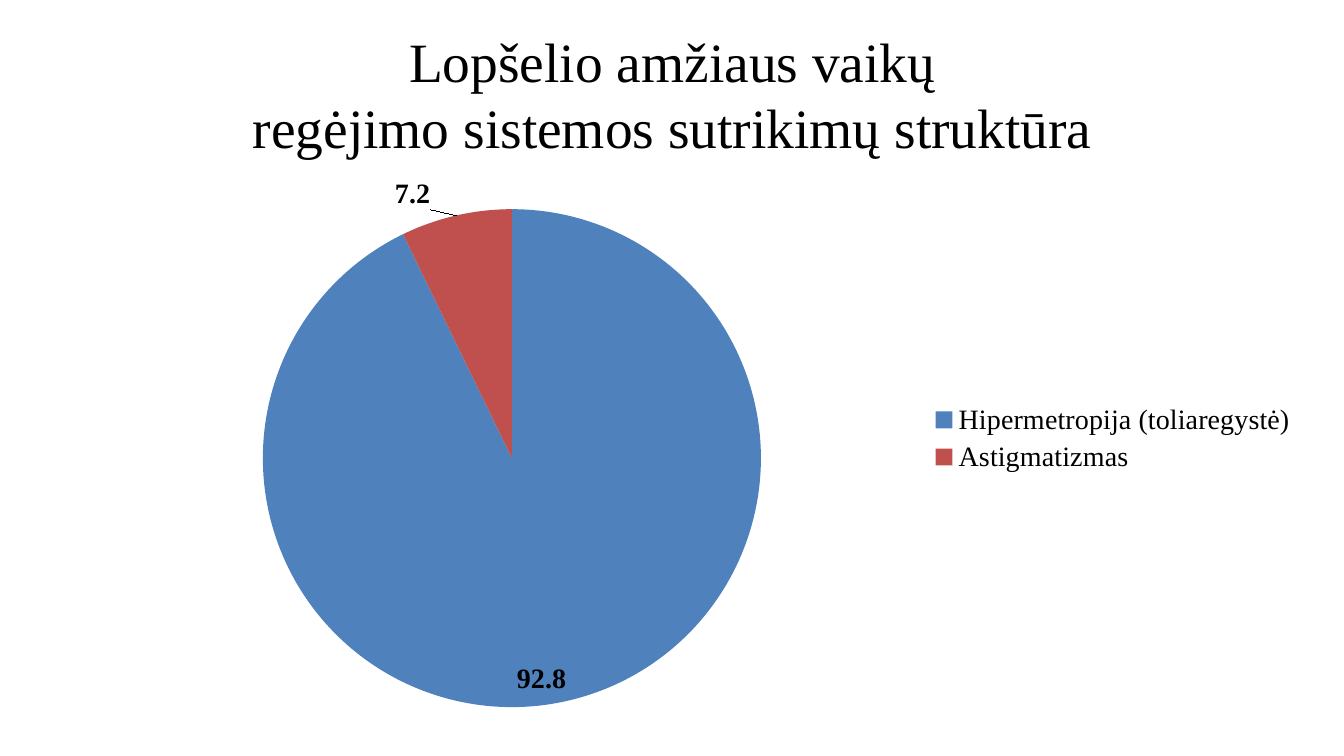
from lxml import etree
from pptx import Presentation
from pptx.chart.data import CategoryChartData
from pptx.dml.color import RGBColor
from pptx.enum import chart as ch, text
from pptx.oxml.ns import qn
from pptx.util import Inches, Pt

SERIF = "Times New Roman"


def style(font, size, bold=False):
    font.name, font.size, font.bold = SERIF, Pt(size), bold
    font.color.rgb = RGBColor.from_string("000000")


def manual_layout(**values):
    """Return a c:layout element holding the given settings in order."""
    layout = etree.Element(qn("c:layout"))
    manual = etree.SubElement(layout, qn("c:manualLayout"))
    for name, value in values.items():
        etree.SubElement(manual, qn("c:" + name)).set("val", str(value))
    return layout


prs = Presentation()
prs.slide_width, prs.slide_height = Inches(13.33), Inches(7.5)
s = prs.slides.add_slide(prs.slide_layouts[6])

# Title
title = s.shapes.add_textbox(Inches(0.67), Inches(0.3), Inches(12), Inches(1.25))
tf = title.text_frame
tf.word_wrap = True
tf.vertical_anchor = text.MSO_ANCHOR.MIDDLE
p = tf.paragraphs[0]
p.text = "Lopšelio amžiaus vaikų\vregėjimo sistemos sutrikimų struktūra"
p.alignment = text.PP_ALIGN.CENTER
style(p.font, 39.6)

# Pie chart
data = CategoryChartData()
data.categories = ["Hipermetropija (toliaregystė)", "Astigmatizmas"]
data.add_series("Series 1", [92.8, 7.2])
chart = s.shapes.add_chart(ch.XL_CHART_TYPE.PIE, Inches(0.92), Inches(1.55),
                           Inches(12.05), Inches(5.6), data).chart
chart.has_title = False
chart.font.name, chart.font.size = "Calibri", Pt(18)
chart.has_legend = True
chart.legend.position = ch.XL_LEGEND_POSITION.RIGHT
chart.legend.include_in_layout = False
style(chart.legend.font, 20)

plot = chart.plots[0]
plot.vary_by_categories = True
pie = plot.series[0]
for i, color in enumerate(["4F81BD", "C0504D"]):
    fill = pie.points[i].format.fill
    fill.solid()
    fill.fore_color.rgb = RGBColor.from_string(color)

labels = pie.data_labels
labels.show_value = True
labels.position = ch.XL_LABEL_POSITION.INSIDE_END
style(labels.font, 20, True)
small_label = pie.points[1].data_label
style(small_label.font, 20, True)
small_label.position = ch.XL_LABEL_POSITION.OUTSIDE_END

# Pie placement, and the small label moved aside with a leader line
area = chart._chartSpace.find(".//" + qn("c:plotArea"))
for old in area.findall(qn("c:layout")):
    area.remove(old)
area.insert(0, manual_layout(layoutTarget="inner", xMode="edge", yMode="edge",
                             x=0.14, y=0.09, w=0.41, h=0.89))
dlbls = area.find(".//" + qn("c:ser")).find(qn("c:dLbls"))
dlbls.find(qn("c:dLbl")).insert(1, manual_layout(x=-0.02, y=0))
leader = dlbls.find(qn("c:showLeaderLines"))
if leader is None:
    leader = etree.SubElement(dlbls, qn("c:showLeaderLines"))
leader.set("val", "1")

prs.save("out.pptx")
